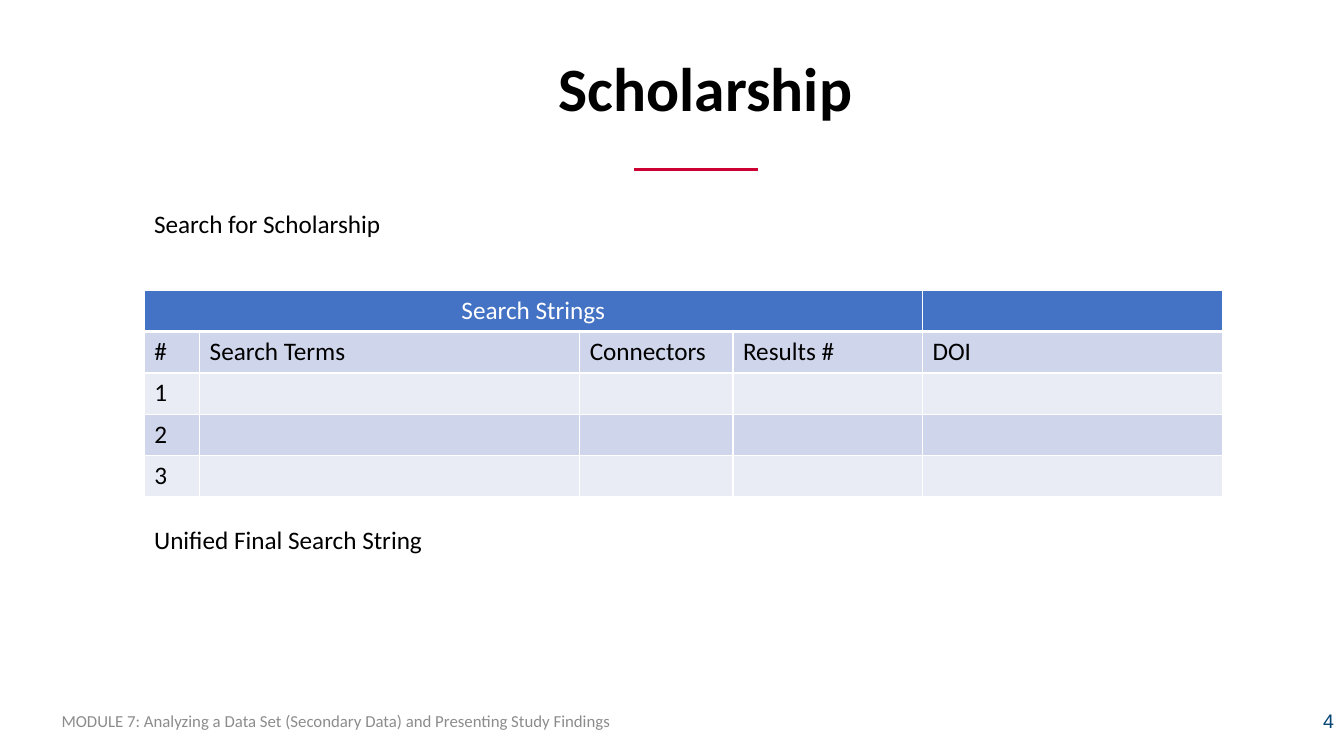
from lxml import etree
from pptx import Presentation
from pptx.dml.color import RGBColor
from pptx.enum import shapes, text
from pptx.oxml import ns
from pptx.util import Inches, Pt

BLACK = RGBColor(0x00, 0x00, 0x00)
WHITE = RGBColor(0xFF, 0xFF, 0xFF)
RED = RGBColor(0xCC, 0x00, 0x33)
NAVY = RGBColor(0x00, 0x44, 0x74)
GRAY = RGBColor(0x8C, 0x8C, 0x8C)
BLUE = RGBColor(0x44, 0x72, 0xC4)
DARK = RGBColor(0xCF, 0xD5, 0xEA)
LIGHT = RGBColor(0xE9, 0xEB, 0xF5)

LEFT, MID, RIGHT = text.PP_ALIGN.LEFT, text.PP_ALIGN.CENTER, text.PP_ALIGN.RIGHT
WIDTHS = [0.55, 3.77, 1.52, 1.88, 2.98]
ROWS = [
    ["Search Strings"],
    ["#", "Search Terms", "Connectors", "Results #", "DOI"],
    ["1"],
    ["2"],
    ["3"],
]
HIGH = 0.41


def style(frame, size, color, align=LEFT, bold=False, face="Calibri"):
    para = frame.paragraphs[0]
    para.alignment = align
    for font in [para.font] + [run.font for run in para.runs]:
        font.name = face
        font.size = Pt(size)
        font.bold = bold
        font.color.rgb = color


def add_text(slide, words, box, size, color, anchor=text.MSO_ANCHOR.MIDDLE, **look):
    frame = slide.shapes.add_textbox(*map(Inches, box)).text_frame
    frame.word_wrap = True
    frame.vertical_anchor = anchor
    frame.text = words
    style(frame, size, color, **look)
    return frame


def add_rule(slide):
    rule = slide.shapes.add_connector(
        shapes.MSO_CONNECTOR.STRAIGHT,
        Inches(7.52), Inches(1.68), Inches(6.29), Inches(1.68))
    rule.line.color.rgb = RED
    rule.line.width = Pt(2.25)
    etree.SubElement(rule._element.spPr, ns.qn("a:effectLst"))


def add_edges(cell, head):
    props = cell._tc.get_or_add_tcPr()
    for spot, side in enumerate(["lnL", "lnR", "lnT", "lnB"]):
        thick = 3 if head and side == "lnB" else 1
        edge = etree.Element(ns.qn("a:" + side), w=str(Pt(thick)))
        fill = etree.SubElement(edge, ns.qn("a:solidFill"))
        etree.SubElement(fill, ns.qn("a:srgbClr"), val=str(WHITE))
        props.insert(spot, edge)


def add_grid(slide):
    grid = slide.shapes.add_table(
        len(ROWS), len(WIDTHS), Inches(1.43), Inches(2.88),
        Inches(sum(WIDTHS)), Inches(HIGH * len(ROWS))).table
    for col, width in zip(grid.columns, WIDTHS):
        col.width = Inches(width)
    for r, words in enumerate(ROWS):
        grid.rows[r].height = Inches(HIGH)
        head = r == 0
        for c in range(len(WIDTHS)):
            cell = grid.cell(r, c)
            cell.fill.solid()
            cell.fill.fore_color.rgb = BLUE if head else DARK if r % 2 else LIGHT
            if c < len(words):
                cell.text_frame.text = words[c]
            style(cell.text_frame, 18, WHITE if head else BLACK, MID if head else LEFT)
            add_edges(cell, head)
    grid.cell(0, 0).merge(grid.cell(0, 3))


def main():
    deck = Presentation()
    deck.slide_width, deck.slide_height = Inches(13.33), Inches(7.5)
    slide = deck.slides.add_slide(deck.slide_layouts[6])
    add_rule(slide)
    title = add_text(slide, "Scholarship", (1.25, 0.42, 11.5, 0.98), 44, BLACK,
                     align=MID, bold=True)
    title.paragraphs[0].line_spacing = 0.9
    add_text(slide, "4", (11, 6.95, 2.33, 0.4), 14, NAVY, align=RIGHT, face="Arial")
    add_text(slide, "MODULE 7: Analyzing a Data Set (Secondary Data) and Presenting Study Findings",
             (0, 6.95, 6.67, 0.4), 12, GRAY, align=MID)
    add_grid(slide)
    top = text.MSO_ANCHOR.TOP
    add_text(slide, "Search for Scholarship", (1.43, 2.02, 8.51, 0.4), 18, BLACK, top)
    add_text(slide, "Unified Final Search String", (1.43, 5.15, 3.32, 0.4), 18, BLACK, top)
    deck.save("out.pptx")


if __name__ == "__main__":
    main()
